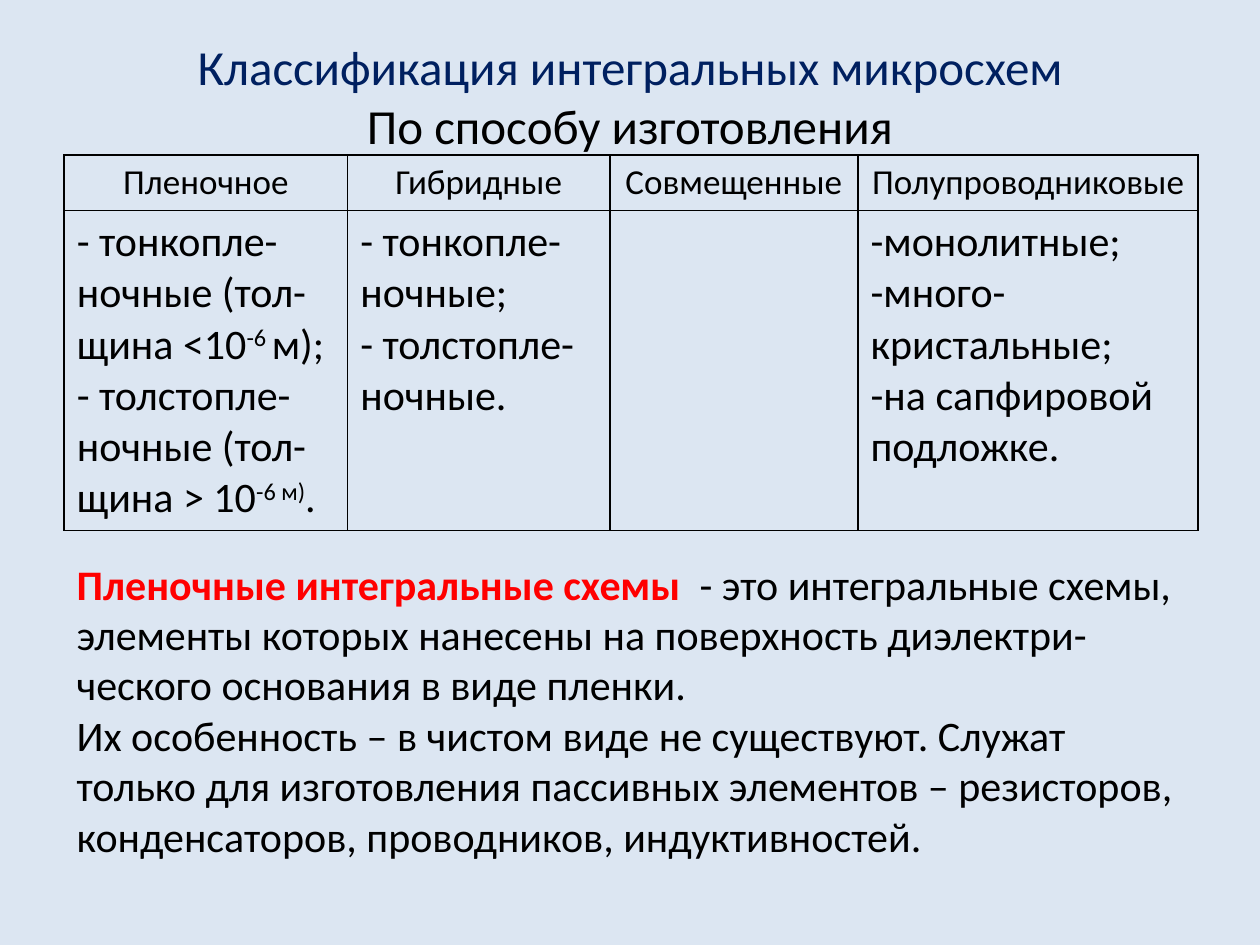
from lxml import etree
from pptx import Presentation
from pptx.dml.color import RGBColor
from pptx.enum.text import MSO_ANCHOR, PP_ALIGN
from pptx.oxml.ns import qn
from pptx.util import Inches, Pt

CENTER, LEFT = PP_ALIGN.CENTER, PP_ALIGN.LEFT
MIDDLE = MSO_ANCHOR.MIDDLE
NAVY, BLACK, RED, PALE_BLUE = "002060", "000000", "FF0000", "DCE6F2"


def color(hex_string):
    return RGBColor.from_string(hex_string)


def write(text_frame, paragraphs, size, alignment=LEFT):
    """Fill a frame; each paragraph is a list of (text, colour, bold, superscript)."""
    text_frame.word_wrap = True
    for index, runs in enumerate(paragraphs):
        paragraph = text_frame.add_paragraph() if index else text_frame.paragraphs[0]
        paragraph.alignment = alignment
        paragraph.font.name = "Calibri"
        paragraph.font.size = Pt(size)
        for text, run_color, bold, superscript in runs:
            run = paragraph.add_run()
            run.text = text
            run.font.color.rgb = color(run_color)
            run.font.bold = bold
            if superscript:
                run._r.get_or_add_rPr().set("baseline", "30000")


presentation = Presentation()
presentation.slide_width = Inches(10)
presentation.slide_height = Inches(7.5)
slide = presentation.slides.add_slide(presentation.slide_layouts[6])
slide.background.fill.solid()
slide.background.fill.fore_color.rgb = color(PALE_BLUE)

# Title
title = slide.shapes.add_textbox(Inches(0.5), Inches(0.13), Inches(9), Inches(1.25))
title.text_frame.vertical_anchor = MIDDLE
write(title.text_frame, [
    [("Классификация интегральных микросхем", NAVY, False, False)],
    [("По способу изготовления", BLACK, False, False)],
], 28, CENTER)

# Classification table: heading and paragraphs of each column;
# a paragraph is a list of pieces, every second piece is superscript
columns = [
    (2.25, "Пленочное", [
        ["- тонкопле-ночные (тол-щина <10", "-6 ", "м);"],
        ["- толстопле-ночные (тол-щина > 10", "-6 м)", "."],
    ]),
    (2.08, "Гибридные", [["- тонкопле-ночные;"], ["- толстопле-ночные."]]),
    (1.97, "Совмещенные", []),
    (2.7, "Полупроводниковые", [
        ["-монолитные;"],
        ["-много- кристальные;"],
        ["-на сапфировой подложке."],
    ]),
]
table = slide.shapes.add_table(
    2, len(columns), Inches(0.51), Inches(1.23), Inches(9), Inches(2.98)).table
table.first_row = False
table.horz_banding = False
table.rows[0].height = Inches(0.44)
table.rows[1].height = Inches(2.54)

for index, (width, heading, items) in enumerate(columns):
    table.columns[index].width = Inches(width)
    write(table.cell(0, index).text_frame, [[(heading, BLACK, False, False)]], 20, CENTER)
    write(table.cell(1, index).text_frame, [
        [(piece, BLACK, False, position % 2 == 1) for position, piece in enumerate(pieces)]
        for pieces in items
    ], 24)

for cell in table.iter_cells():
    properties = cell._tc.get_or_add_tcPr()
    for side in ("a:lnL", "a:lnR", "a:lnT", "a:lnB"):
        border = etree.SubElement(properties, qn(side), w=str(Pt(1)))
        fill = etree.SubElement(border, qn("a:solidFill"))
        etree.SubElement(fill, qn("a:srgbClr"), val=BLACK)
    cell.fill.background()

# Definition
definition = slide.shapes.add_textbox(
    Inches(0.51), Inches(4.38), Inches(8.98), Inches(2.52))
write(definition.text_frame, [
    [
        ("Пленочные интегральные схемы  ", RED, True, False),
        ("- это интегральные схемы, элементы которых нанесены на поверхность "
         "диэлектри-ческого основания в виде пленки.", BLACK, False, False),
    ],
    [("Их особенность – в чистом виде не существуют. Служат только для изготовления "
      "пассивных элементов – резисторов, конденсаторов, проводников, индуктивностей.",
      BLACK, False, False)],
], 24)

presentation.save("out.pptx")
